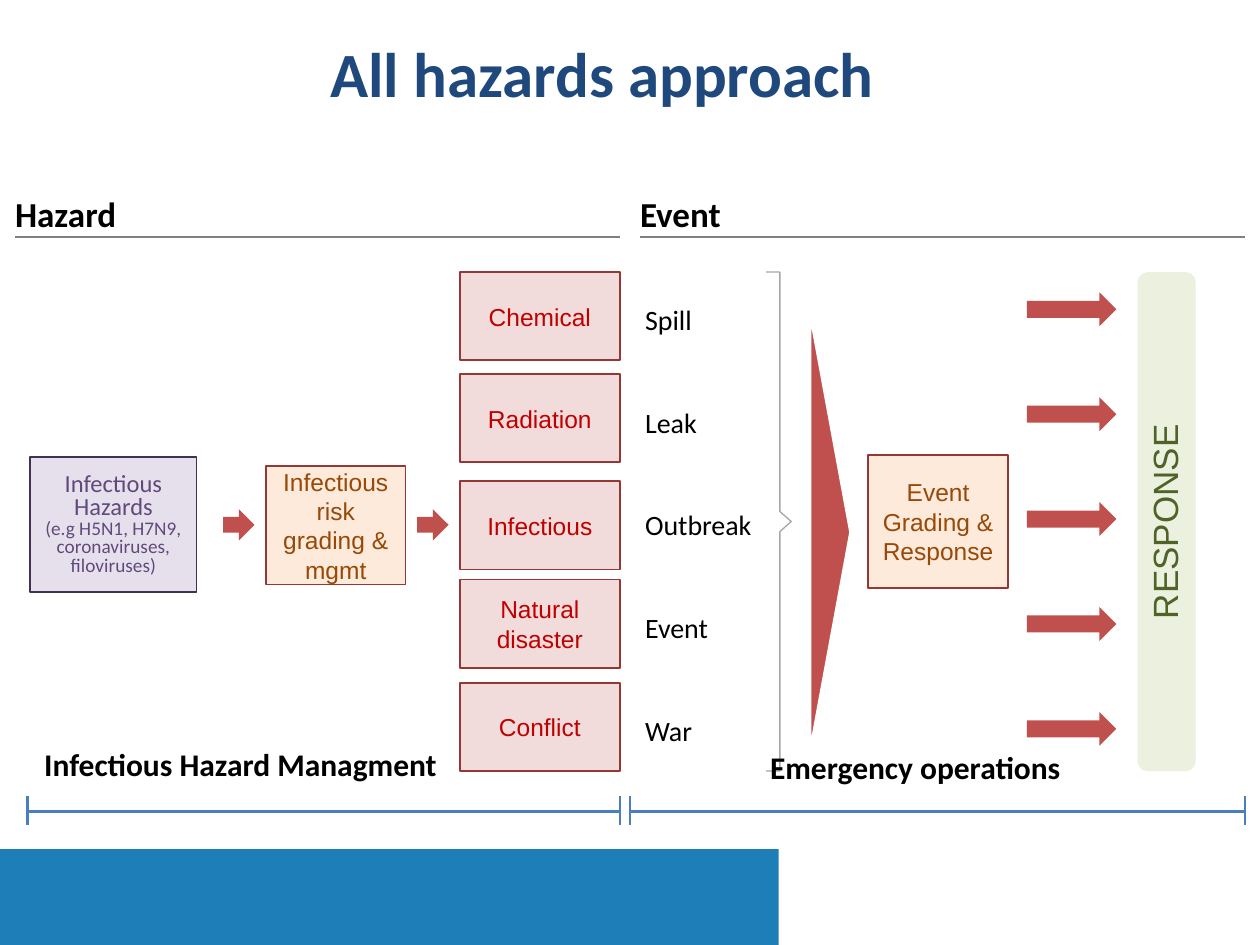
from dataclasses import dataclass
from typing import Any, Optional

from lxml.etree import SubElement
from pptx import Presentation
from pptx.dml.color import RGBColor
from pptx.enum.shapes import MSO_CONNECTOR as Connector, MSO_SHAPE as Preset
from pptx.enum.text import MSO_ANCHOR as Anchor, MSO_AUTO_SIZE as AutoSize, PP_ALIGN as Align
from pptx.oxml.ns import qn
from pptx.util import Inches, Pt

RED = "C0504D"
DARK_RED = "953735"
BLACK = "000000"


@dataclass
class Style:
    size: float
    color: str
    font: str = "Calibri"
    bold: bool = False
    align: Align = Align.CENTER
    anchor: Anchor = Anchor.MIDDLE
    spacing: Optional[float] = None
    margins: tuple = (0.1, 0.05, 0.1, 0.05)
    wrap: bool = True


@dataclass
class Block:
    left: float
    top: float
    width: float
    height: float
    fill: Optional[str] = None
    outline: Optional[str] = None
    weight: float = 1
    preset: Preset = Preset.RECTANGLE
    rotation: float = 0


def rgb(value: str) -> RGBColor:
    return RGBColor.from_string(value)


def assign(target: Any, values: dict) -> None:
    for name, value in values.items():
        setattr(target, name, value)


def place(shape: Any, box: Block) -> None:
    names = ("left", "top", "width", "height")
    assign(shape, {name: Inches(getattr(box, name)) for name in names})


def write(frame: Any, lines: list[str], style: Style, sizes: tuple = ()) -> None:
    left, top, right, bottom = map(Inches, style.margins)
    assign(frame, {
        "auto_size": AutoSize.NONE, "word_wrap": style.wrap, "vertical_anchor": style.anchor,
        "margin_left": left, "margin_top": top, "margin_right": right, "margin_bottom": bottom,
    })
    for index, line in enumerate(lines):
        paragraph = frame.paragraphs[0] if index == 0 else frame.add_paragraph()
        assign(paragraph, {"alignment": style.align, "line_spacing": style.spacing})
        run = paragraph.add_run()
        run.text = line
        size = sizes[index] if sizes else style.size
        assign(run.font, {"size": Pt(size), "name": style.font, "bold": style.bold})
        run.font.color.rgb = rgb(style.color)


def add_block(shapes: Any, box: Block) -> Any:
    shape = shapes.add_shape(box.preset, 0, 0, 0, 0)
    place(shape, box)
    shape.rotation = box.rotation
    shape.shadow.inherit = False
    shape.fill.solid()
    shape.fill.fore_color.rgb = rgb(box.fill)
    if box.outline:
        shape.line.color.rgb = rgb(box.outline)
        shape.line.width = Pt(box.weight)
    else:
        shape.line.fill.background()
    return shape


def add_label(shapes: Any, box: Block, line: str, style: Style) -> None:
    label = shapes.add_textbox(0, 0, 0, 0)
    place(label, box)
    write(label.text_frame, [line], style)


def add_rule(shapes: Any, start: tuple, end: tuple, color: str, weight: float) -> None:
    rule = shapes.add_connector(Connector.STRAIGHT, *map(Inches, start + end))
    rule.line.color.rgb = rgb(color)
    rule.line.width = Pt(weight)
    SubElement(rule.element.spPr, qn("a:effectLst"))


def add_span(shapes: Any, left: float, right: float) -> None:
    add_rule(shapes, (left, 6.44), (right, 6.44), "4B7EBC", 1.5)
    for end in (left, right):
        add_rule(shapes, (end, 6.32), (end, 6.55), "4B7EBC", 1.5)


def add_bracket(shapes: Any) -> None:
    points = [(6.19, 2.16), (6.19, 4.06), (6.28, 4.14), (6.19, 4.22), (6.19, 6.12), (6.08, 6.12)]
    builder = shapes.build_freeform(Inches(6.08), Inches(2.16))
    builder.add_line_segments([(Inches(x), Inches(y)) for x, y in points], close=False)
    bracket = builder.convert_to_shape()
    bracket.shadow.inherit = False
    bracket.fill.background()
    bracket.line.color.rgb = rgb("A6A6A6")
    bracket.line.width = Pt(0.75)


def main() -> None:
    deck = Presentation()
    assign(deck, {"slide_width": Inches(10), "slide_height": Inches(7.5)})
    slide = deck.slides.add_slide(deck.slide_layouts[5])
    shapes = slide.shapes

    place(shapes.title, Block(0.22, 0.22, 9.12, 0.71))
    write(shapes.title.text_frame, ["All hazards approach"], Style(36, "1F497D", bold=True))
    add_block(shapes, Block(0, 6.74, 6.18, 0.76, "1E7FB8"))

    heading = Style(20, BLACK, bold=True, align=Align.LEFT, anchor=Anchor.BOTTOM,
                    margins=(0, 0, 0, 0.02))
    for name, left in (("Hazard", 0.12), ("Event", 5.08)):
        add_rule(shapes, (left, 1.88), (left + 4.8, 1.88), "808080", 0.75)
        add_label(shapes, Block(left, 1.52, 4.8, 0.36), name, heading)

    hazards = (("Chemical", 2.16), ("Radiation", 2.97), ("Infectious", 3.82),
               ("Natural disaster", 4.6), ("Conflict", 5.42))
    for hazard, top in hazards:
        box = add_block(shapes, Block(3.65, top, 1.27, 0.7, "F2DCDB", DARK_RED))
        write(box.text_frame, [hazard], Style(14, "C00000", "Arial"))

    event_style = Style(16, BLACK, align=Align.LEFT, anchor=Anchor.TOP, margins=(0, 0, 0, 0))
    for row, event in enumerate(("Spill", "Leak", "Outbreak", "Event", "War")):
        add_label(shapes, Block(5.12, 2.4 + 0.815 * row, 0.9, 0.27), event, event_style)
        add_block(shapes, Block(8.15, 2.32 + 0.8325 * row, 0.71, 0.27, RED,
                                preset=Preset.RIGHT_ARROW))

    add_bracket(shapes)
    add_block(shapes, Block(4.91, 4.07, 3.36, 0.31, RED, "FFFFFF", 0.75,
                            Preset.ISOSCELES_TRIANGLE, 90))
    response = add_block(shapes, Block(7.28, 3.91, 3.96, 0.46, "EBF1DE",
                                       preset=Preset.ROUNDED_RECTANGLE, rotation=270))
    write(response.text_frame, ["RESPONSE"], Style(20, "4F6228", "Arial", spacing=0.9))

    grading = Style(14, "984807", "Arial")
    event_grading = add_block(shapes, Block(6.89, 3.61, 1.11, 1.06, "FDEADA", DARK_RED))
    write(event_grading.text_frame, ["Event Grading & Response"], grading)
    risk_grading = add_block(shapes, Block(2.11, 3.7, 1.11, 0.94, "FDEADA", DARK_RED))
    write(risk_grading.text_frame, ["Infectious risk", "grading & mgmt"], grading)

    infectious = add_block(shapes, Block(0.24, 3.63, 1.32, 1.07, "E6E0EC", "403152"))
    write(infectious.text_frame,
          ["Infectious Hazards", "(e.g H5N1, H7N9, coronaviruses, filoviruses)"],
          Style(14, "604A7B", spacing=0.8), sizes=(14, 11))
    for left in (1.77, 3.31):
        add_block(shapes, Block(left, 4.04, 0.25, 0.25, RED, preset=Preset.RIGHT_ARROW))

    add_span(shapes, 0.22, 4.92)
    add_span(shapes, 5, 9.88)
    phase = {"bold": True, "anchor": Anchor.TOP, "margins": (0, 0, 0, 0)}
    add_label(shapes, Block(0.24, 5.91, 3.34, 0.3), "Infectious Hazard Managment",
              Style(18, BLACK, **phase))
    add_label(shapes, Block(6.28, 5.94, 1.97, 0.27), "Emergency operations",
              Style(18, BLACK, wrap=False, **phase))

    deck.save("out.pptx")


if __name__ == "__main__":
    main()
